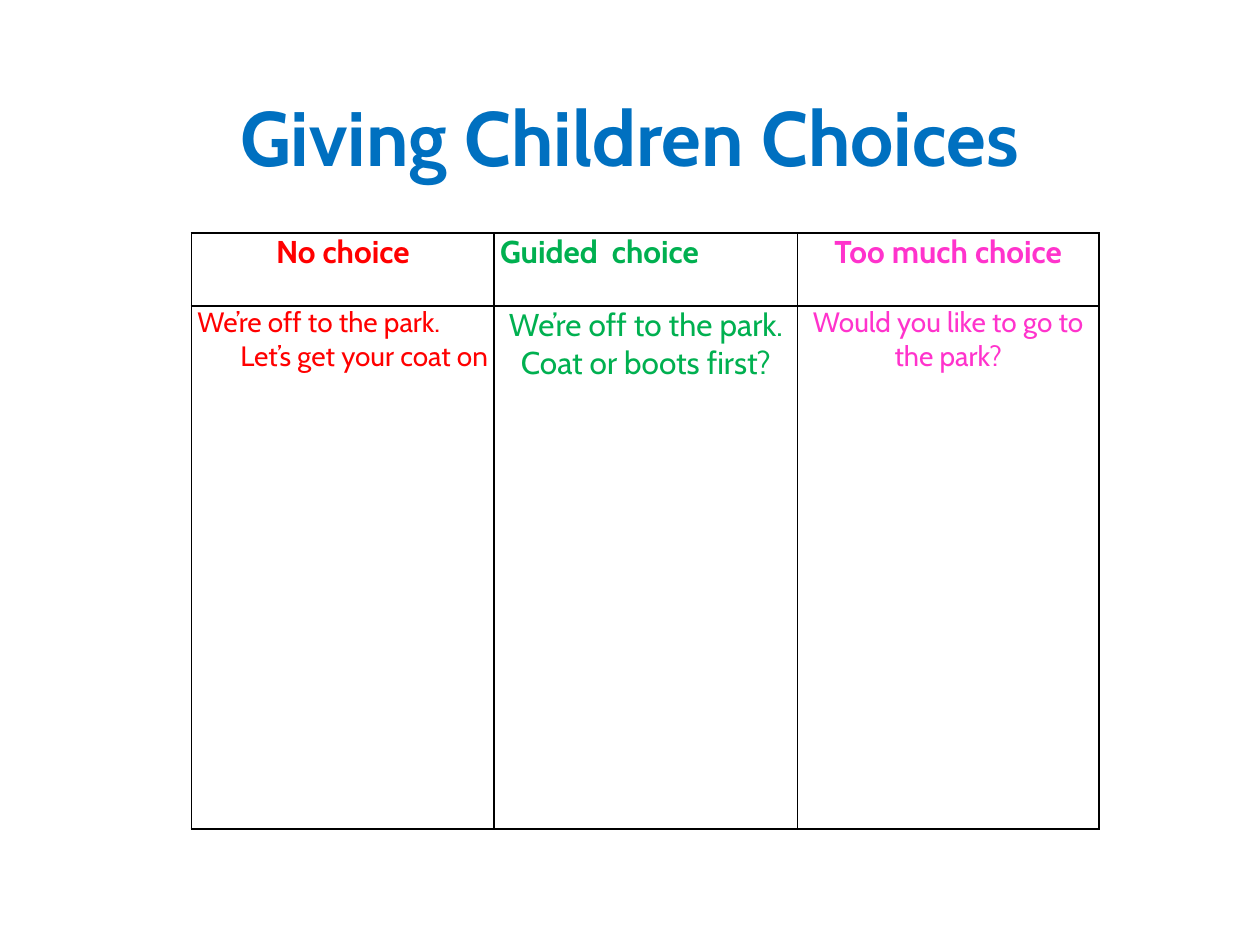
import pptx
import pptx.dml.color
import pptx.enum.text
import pptx.oxml
import pptx.oxml.ns
import pptx.util

Cm = pptx.util.Cm
Pt = pptx.util.Pt
RGBColor = pptx.dml.color.RGBColor
ALIGN = pptx.enum.text.PP_ALIGN
LEFT, CENTER, RIGHT = ALIGN.LEFT, ALIGN.CENTER, ALIGN.RIGHT

FONT = "Cabin"
BLUE = RGBColor(0x00, 0x70, 0xC0)
RED = RGBColor(0xFF, 0x00, 0x00)
GREEN = RGBColor(0x00, 0xB0, 0x50)
PINK = RGBColor(0xFF, 0x33, 0xCC)
BORDER = RGBColor(0x00, 0x00, 0x00)

TITLE = "Giving Children Choices"
HEADING_SIZE = 18
# Each choice: colour, heading, heading alignment, example size, example lines
CHOICES = [
    (RED, "No choice", CENTER, 16,
     [("We’re off to the park.", LEFT), ("Let’s get your coat on", RIGHT)]),
    (GREEN, "Guided  choice", LEFT, 18,
     [("We’re off to the park. Coat or boots first?", CENTER)]),
    (PINK, "Too much choice", CENTER, 16,
     [("Would you like to go to the park?", CENTER)]),
]
COLUMN_WIDTHS = [Cm(6.1), Cm(6.12), Cm(6.07)]
ROW_HEIGHTS = [Cm(1.47), Cm(10.54)]
CELL_PADDING = Cm(0.12)


def write(frame, lines, size, color, bold=False):
    """Fill a text frame with one paragraph per (text, alignment) pair."""
    for index, (text, alignment) in enumerate(lines):
        paragraph = frame.paragraphs[0] if index == 0 else frame.add_paragraph()
        paragraph.alignment = alignment
        run = paragraph.add_run()
        run.text = text
        run.font.name = FONT
        run.font.size = Pt(size)
        run.font.bold = bold
        run.font.color.rgb = color


def add_borders(cell):
    properties = cell._tc.get_or_add_tcPr()
    for position, side in enumerate(("lnL", "lnR", "lnT", "lnB")):
        properties.insert(position, pptx.oxml.parse_xml(
            f'<a:{side} {pptx.oxml.ns.nsdecls("a")} w="{Pt(1)}"><a:solidFill>'
            f'<a:srgbClr val="{BORDER}"/></a:solidFill></a:{side}>'))


def add_title(slide):
    box = slide.shapes.add_textbox(Cm(1.75), Cm(1.02), Cm(21.9), Cm(3.68))
    frame = box.text_frame
    frame.word_wrap = True
    frame.vertical_anchor = pptx.enum.text.MSO_ANCHOR.MIDDLE
    write(frame, [(TITLE, CENTER)], 44, BLUE, bold=True)
    frame.paragraphs[0].line_spacing = 0.9


def add_choices(slide):
    table = slide.shapes.add_table(
        len(ROW_HEIGHTS), len(CHOICES), Cm(3.86), Cm(4.7),
        sum(COLUMN_WIDTHS), sum(ROW_HEIGHTS)).table
    table.first_row = False
    table.horz_banding = False
    for row, height in zip(table.rows, ROW_HEIGHTS):
        row.height = height
    for column, width in zip(table.columns, COLUMN_WIDTHS):
        column.width = width
    for cell in table.iter_cells():
        cell.fill.background()
        cell.margin_left = cell.margin_right = CELL_PADDING
        cell.margin_top = cell.margin_bottom = 0
        add_borders(cell)
    for index, (color, heading, alignment, size, example) in enumerate(CHOICES):
        write(table.cell(0, index).text_frame, [(heading, alignment)],
              HEADING_SIZE, color, bold=True)
        write(table.cell(1, index).text_frame, example, size, color)


def main():
    deck = pptx.Presentation()
    deck.slide_width, deck.slide_height = Cm(25.4), Cm(19.05)
    slide = deck.slides.add_slide(deck.slide_layouts[6])
    add_title(slide)
    add_choices(slide)
    deck.save("out.pptx")


if __name__ == "__main__":
    main()
